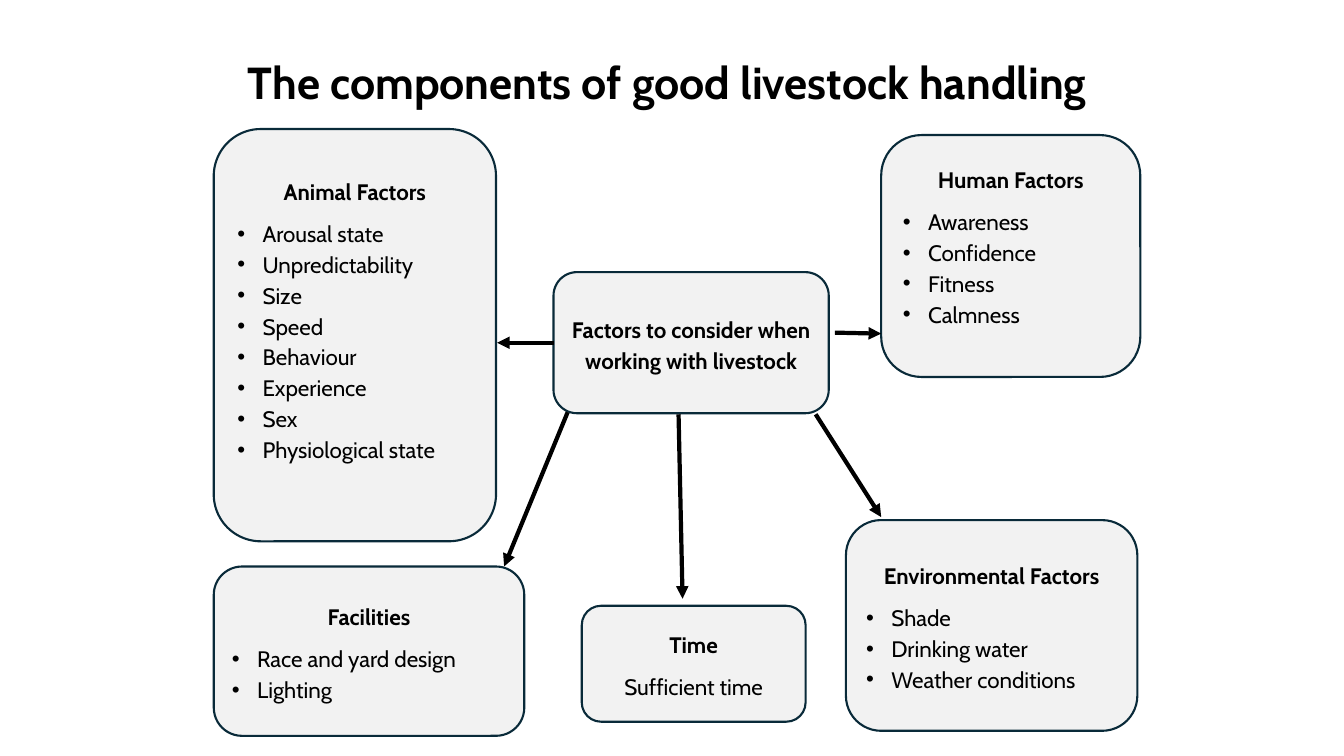
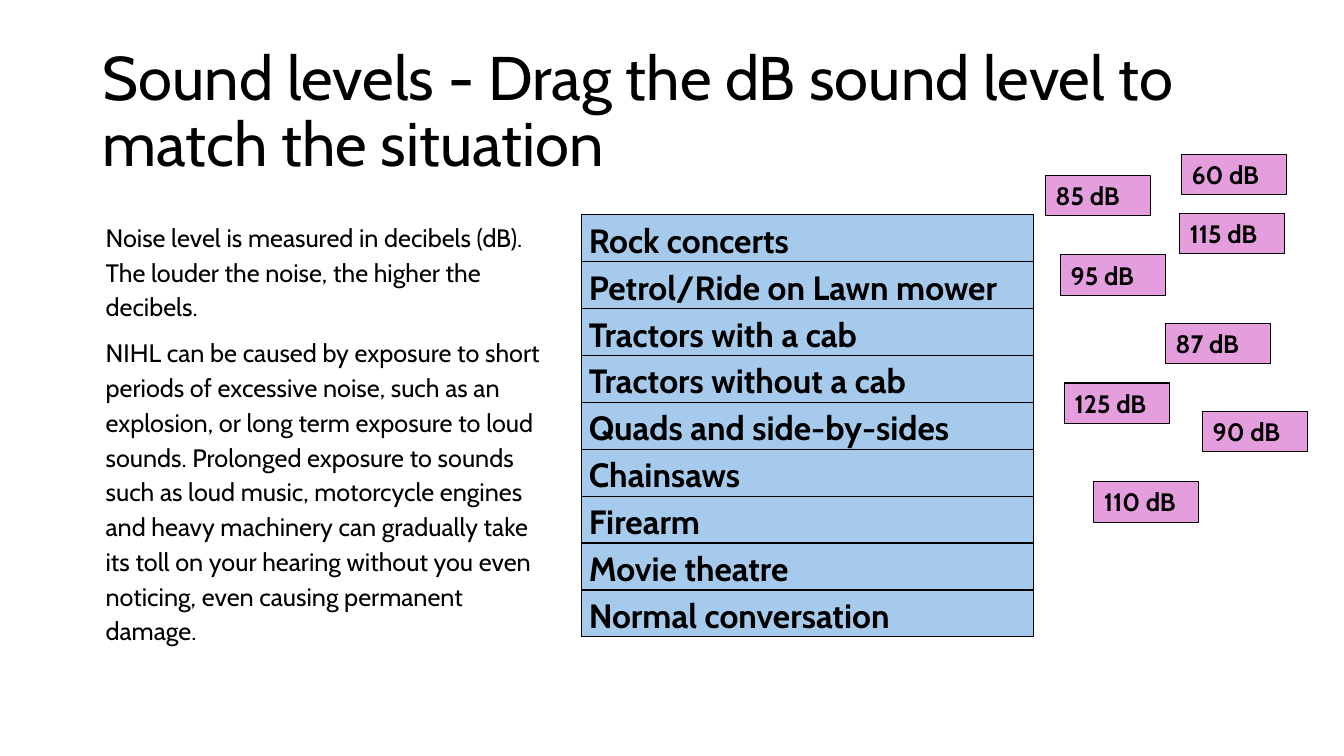
"""Build two slides on livestock handling and sound levels."""
from dataclasses import dataclass

from lxml.etree import SubElement
from pptx import Presentation
from pptx.dml.color import RGBColor
from pptx.enum.shapes import MSO_CONNECTOR, MSO_SHAPE
from pptx.enum.text import MSO_ANCHOR as Anchor, MSO_AUTO_SIZE as AutoSize, PP_ALIGN as Align
from pptx.oxml.ns import qn
from pptx.util import Inches, Pt


@dataclass(frozen=True)
class Theme:
    font: str = "Cabin"
    ink: str = "000000"
    panel: str = "F2F2F2"
    panel_line: str = "092A39"
    row: str = "A6CAEC"
    chip: str = "E59EDD"
    heading: int = 32
    title: int = 44
    panel_text: int = 16
    body: int = 18
    row_text: int = 24
    loose: float = 1.15
    tight: float = 0.9
    after: int = 8


THEME = Theme()

HANDLING_TITLE = "The components of good livestock handling "
CENTRE = ("Factors to consider when working with livestock", (5.49, 2.7, 2.73, 1.4))
FACTORS = [
    {"name": "Facilities", "at": (2.12, 5.62, 3.08, 1.68),
     "bullets": ["Race and yard design", "Lighting"]},
    {"name": "Animal Factors", "at": (2.12, 1.28, 2.8, 4.09), "bottom": 0.38,
     "bullets": ["Arousal state", "Unpredictability", "Size", "Speed", "Behaviour",
                 "Experience", "Sex", "Physiological state"]},
    {"name": "Time", "at": (5.77, 6.01, 2.22, 1.15), "note": "Sufficient time"},
    {"name": "Environmental Factors", "at": (8.39, 5.16, 2.89, 2.09),
     "bullets": ["Shade", "Drinking water", "Weather conditions"]},
    {"name": "Human Factors", "at": (8.74, 1.34, 2.57, 2.4), "bottom": 0.27,
     "bullets": ["Awareness", "Confidence", "Fitness", "Calmness"]},
]
ARROWS = [
    (5.49, 3.4, 4.93, 3.4),
    (8.28, 3.3, 8.74, 3.31),
    (5.63, 4.09, 5, 5.62),
    (6.73, 4.11, 6.77, 5.94),
    (8.09, 4.11, 8.74, 5.13),
]

SOUND_TITLE = "Sound levels - Drag the dB sound level to match the situation"
NOISE_TEXT = [
    "Noise level is measured in decibels (dB). The louder the noise, the higher the decibels.",
    "NIHL can be caused by exposure to short periods of excessive noise, such as an explosion, "
    "or long term exposure to loud sounds. Prolonged exposure to sounds such as loud music, "
    "motorcycle engines and heavy machinery can gradually take its toll on your hearing without "
    "you even noticing, even causing permanent damage.",
]
SITUATIONS = ["Rock concerts", "Petrol/Ride on Lawn mower", "Tractors with a cab",
              "Tractors without a cab", "Quads and side-by-sides", "Chainsaws", "Firearm",
              "Movie theatre", "Normal conversation"]
TABLE_AT = (5.77, 2.13, 4.48, 4.19)
CHIP_SIZE = (1.04, 0.4)
CHIPS = [(115, 11.7, 2.12), (85, 10.37, 1.74), (87, 11.56, 3.21), (110, 10.85, 4.78),
         (95, 10.52, 2.53), (125, 10.56, 3.8), (90, 11.93, 4.08), (60, 11.72, 1.53)]


def inches(values):
    return [Inches(value) for value in values]


def rgb(value):
    return RGBColor.from_string(value)


def write(frame, text, size=THEME.body, bold=False, align=Align.LEFT,
          spacing=None, after=0, bullet=False):
    paragraph = frame.paragraphs[0]
    if paragraph.runs:
        paragraph = frame.add_paragraph()
    if bullet:
        properties = paragraph._p.get_or_add_pPr()
        properties.set("marL", str(Inches(0.25)))
        properties.set("indent", str(-Inches(0.25)))
        SubElement(properties, qn("a:buFont"), typeface="Arial")
        SubElement(properties, qn("a:buChar"), char="•")
    paragraph.alignment = align
    paragraph.space_after = Pt(after)
    if spacing:
        paragraph.line_spacing = spacing
    run = paragraph.add_run()
    run.text = text
    run.font.name = THEME.font
    run.font.size = Pt(size)
    run.font.bold = bold
    run.font.color.rgb = rgb(THEME.ink)


def paint(shape, fill, line, width):
    shape.shadow.inherit = False
    shape.fill.solid()
    shape.fill.fore_color.rgb = rgb(fill)
    shape.line.color.rgb = rgb(line)
    shape.line.width = Pt(width)


def add_text_box(slide, at, anchor=Anchor.TOP):
    frame = slide.shapes.add_textbox(*inches(at)).text_frame
    frame.word_wrap = True
    frame.vertical_anchor = anchor
    return frame


def add_title(slide, text, height, **text_format):
    frame = add_text_box(slide, (0.92, 0.4, 11.5, height), Anchor.MIDDLE)
    write(frame, text, spacing=THEME.tight, **text_format)


def add_panel(slide, name, at, bullets=(), note=None, bottom=0.05):
    shape = slide.shapes.add_shape(MSO_SHAPE.ROUNDED_RECTANGLE, *inches(at))
    paint(shape, THEME.panel, THEME.panel_line, 1.5)
    frame = shape.text_frame
    frame.word_wrap = True
    frame.vertical_anchor = Anchor.MIDDLE
    frame.margin_bottom = Inches(bottom)
    shared = {"size": THEME.panel_text, "spacing": THEME.loose}
    write(frame, name, bold=True, align=Align.CENTER, after=THEME.after, **shared)
    for number, bullet in enumerate(bullets, 1):
        after = THEME.after if number == len(bullets) else 0
        write(frame, bullet, bullet=True, after=after, **shared)
    if note:
        write(frame, note, align=Align.CENTER, after=THEME.after, **shared)


def add_arrow(slide, ends):
    connector = slide.shapes.add_connector(MSO_CONNECTOR.STRAIGHT, *inches(ends))
    connector.line.color.rgb = rgb(THEME.ink)
    connector.line.width = Pt(3)
    SubElement(connector.line._get_or_add_ln(), qn("a:tailEnd"), type="triangle")
    SubElement(connector._element.spPr, qn("a:effectLst"))


def add_border(cell):
    properties = cell._tc.get_or_add_tcPr()
    for side in ("lnL", "lnR", "lnT", "lnB"):
        line = SubElement(properties, qn(f"a:{side}"), w=str(Pt(1)))
        fill = SubElement(line, qn("a:solidFill"))
        SubElement(fill, qn("a:srgbClr"), val=THEME.ink)


def add_situations(slide):
    table = slide.shapes.add_table(len(SITUATIONS), 1, *inches(TABLE_AT)).table
    table.first_row = table.horz_banding = False
    for row, situation in zip(table.rows, SITUATIONS):
        cell = row.cells[0]
        add_border(cell)
        cell.fill.solid()
        cell.fill.fore_color.rgb = rgb(THEME.row)
        cell.margin_left = cell.margin_right = Inches(0.07)
        cell.margin_top = cell.margin_bottom = 0
        write(cell.text_frame, situation, size=THEME.row_text, bold=True, spacing=THEME.loose)


def add_chip(slide, level, left, top):
    shape = slide.shapes.add_shape(MSO_SHAPE.RECTANGLE, *inches((left, top, *CHIP_SIZE)))
    paint(shape, THEME.chip, THEME.ink, 0.75)
    frame = shape.text_frame
    frame.word_wrap = True
    frame.auto_size = AutoSize.SHAPE_TO_FIT_TEXT
    frame.vertical_anchor = Anchor.TOP
    write(frame, f"{level} dB", bold=True)


def build_handling(slide):
    add_title(slide, HANDLING_TITLE, 0.88, size=THEME.heading, bold=True, align=Align.CENTER)
    add_panel(slide, *CENTRE)
    for factor in FACTORS:
        add_panel(slide, **factor)
    for ends in ARROWS:
        add_arrow(slide, ends)


def build_sound(slide):
    add_title(slide, SOUND_TITLE, 1.45, size=THEME.title)
    add_situations(slide)
    for chip in CHIPS:
        add_chip(slide, *chip)
    frame = add_text_box(slide, (0.95, 2.11, 4.53, 4.38))
    for text in NOISE_TEXT:
        write(frame, text, spacing=THEME.loose, after=THEME.after)


def main():
    presentation = Presentation()
    presentation.slide_width, presentation.slide_height = inches((13.33, 7.5))
    for build in (build_handling, build_sound):
        build(presentation.slides.add_slide(presentation.slide_layouts[6]))
    presentation.save("out.pptx")


if __name__ == "__main__":
    main()
